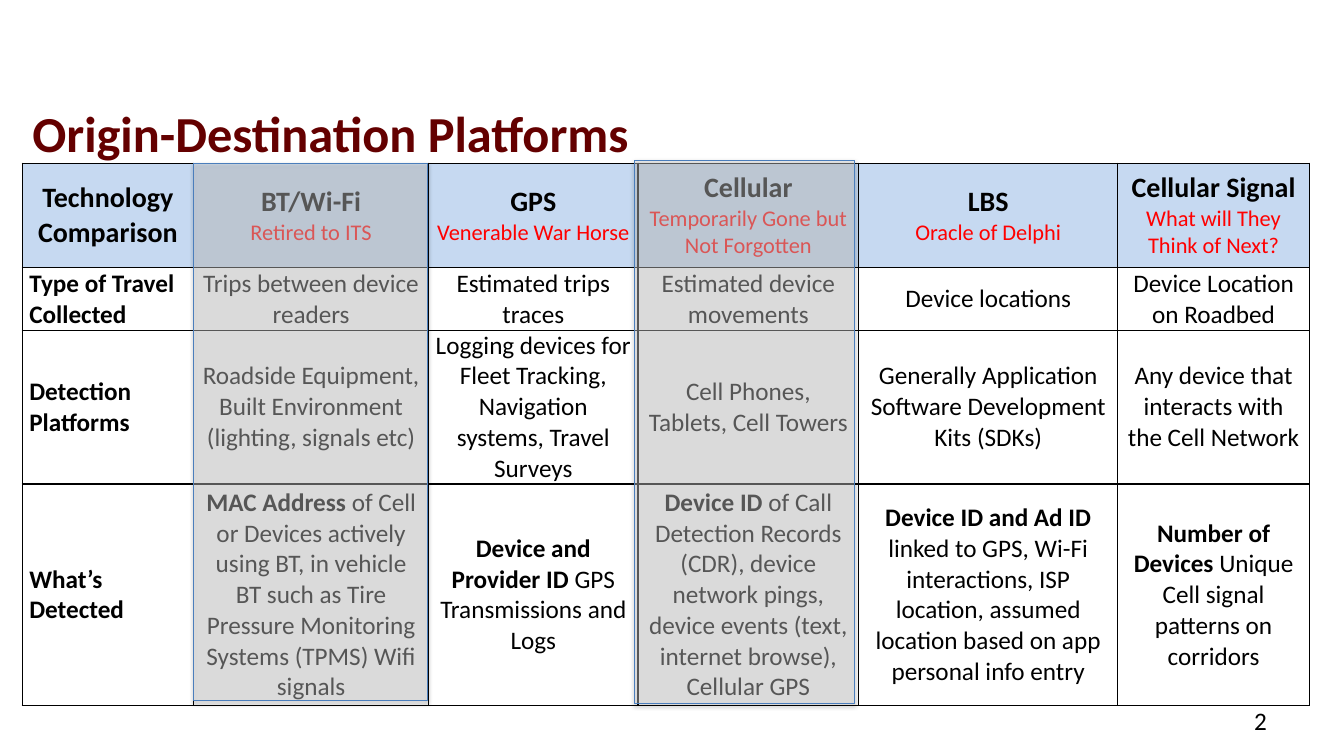
from dataclasses import dataclass

from lxml.etree import SubElement
from pptx import Presentation
from pptx.dml.color import RGBColor as RGB
from pptx.enum.shapes import MSO_SHAPE as Shape
from pptx.enum.text import MSO_ANCHOR as Anchor, MSO_AUTO_SIZE as AutoSize, PP_ALIGN as Align
from pptx.oxml import parse_xml
from pptx.oxml.ns import nsdecls, qn
from pptx.util import Cm, Pt


@dataclass(frozen=True)
class Theme:
    font: str = "Calibri"
    title: str = "640000"
    ink: str = "000000"
    tagline: str = "FF0000"
    header: str = "C6D9F1"
    body: str = "FFFFFF"
    veil: str = "D9D9D9"
    veil_line: str = "4B7EBC"
    title_size: int = 36
    head_size: int = 20
    tag_size: int = 16
    body_size: int = 18


@dataclass(frozen=True)
class Run:
    text: str
    size: int
    color: str
    bold: bool = False


@dataclass(frozen=True)
class Platform:
    name: str
    tagline: str
    width: float
    travel: str
    detection: str
    detected_key: str
    detected: str


@dataclass(frozen=True)
class Box:
    left: float
    top: float
    width: float
    height: float

    def lengths(self) -> list:
        return [Cm(v) for v in (self.left, self.top, self.width, self.height)]


T = Theme()
TITLE_BOX = Box(0.56, 2.44, 23.37, 1.8)
TABLE_BOX = Box(0.56, 4.11, 32.44, 13.46)
NUMBER_BOX = Box(24.28, 17.65, 7.9, 1.02)
VEILS = [Box(15.98, 4.04, 5.56, 13.69), Box(4.88, 4.11, 5.89, 13.54)]
LABEL_WIDTH = 4.32
ROW_HEIGHTS = [2.64, 1.57, 3.66, 5.59]
ROW_LABELS = ["Technology Comparison", "Type of Travel Collected",
              "Detection Platforms", "What’s Detected"]
PLATFORMS = [
    Platform("BT/Wi-Fi", "Retired to ITS", 5.92, "Trips between device readers",
             "Roadside Equipment, Built Environment (lighting, signals etc)",
             "MAC Address ",
             "of Cell or Devices actively using BT, in vehicle BT such as Tire "
             "Pressure Monitoring Systems (TPMS) Wifi signals"),
    Platform("GPS", "Venerable War Horse", 5.28, "Estimated trips traces",
             "Logging devices for Fleet Tracking, Navigation systems, Travel Surveys",
             "Device and Provider ID ", "GPS Transmissions and Logs"),
    Platform("Cellular", "Temporarily Gone but Not Forgotten", 5.56,
             "Estimated device movements", "Cell Phones, Tablets, Cell Towers",
             "Device ID ",
             "of Call Detection Records (CDR), device network pings, device events "
             "(text, internet browse), Cellular GPS"),
    Platform("LBS", "Oracle of Delphi", 6.53, "Device locations",
             "Generally Application Software Development Kits (SDKs)",
             "Device ID and Ad ID ",
             "linked to GPS, Wi-Fi interactions, ISP location, assumed location "
             "based on app personal info entry"),
    Platform("Cellular Signal", "What will They Think of Next?", 4.83,
             "Device Location on Roadbed",
             "Any device that interacts with the Cell Network",
             "Number of Devices ", "Unique Cell signal patterns on corridors"),
]


def write(tf, paragraphs: list[list[Run]], align: Align) -> None:
    tf.word_wrap = True
    for i, runs in enumerate(paragraphs):
        p = tf.add_paragraph() if i else tf.paragraphs[0]
        p.alignment = align
        for run in runs:
            r = p.add_run()
            r.text = run.text
            for name, value in {"name": T.font, "size": Pt(run.size), "bold": run.bold}.items():
                setattr(r.font, name, value)
            r.font.color.rgb = RGB.from_string(run.color)


def add_borders(cell) -> None:
    tc_pr = cell._tc.get_or_add_tcPr()
    for side in ("lnL", "lnR", "lnT", "lnB"):
        ln = SubElement(tc_pr, qn(f"a:{side}"), w=str(Pt(1)))
        fill = SubElement(ln, qn("a:solidFill"))
        SubElement(fill, qn("a:srgbClr"), val=T.ink)


def fill_cell(cell, paragraphs: list[list[Run]], color: str, align: Align) -> None:
    margins = {"margin_left": Cm(0.18), "margin_right": Cm(0.18),
               "margin_top": 0, "margin_bottom": 0}
    for name, value in {**margins, "vertical_anchor": Anchor.MIDDLE}.items():
        setattr(cell, name, value)
    add_borders(cell)
    cell.fill.solid()
    cell.fill.fore_color.rgb = RGB.from_string(color)
    write(cell.text_frame, paragraphs, align)


def platform_cells(item: Platform) -> list[list[list[Run]]]:
    """Paragraphs for each row of one platform's column."""
    return [
        [[Run(item.name, T.head_size, T.ink, True)],
         [Run(item.tagline, T.tag_size, T.tagline)]],
        [[Run(item.travel, T.body_size, T.ink)]],
        [[Run(item.detection, T.body_size, T.ink)]],
        [[Run(item.detected_key, T.body_size, T.ink, True),
          Run(item.detected, T.body_size, T.ink)]],
    ]


def add_comparison(s) -> None:
    labels = [[[Run(text, T.body_size if i else T.head_size, T.ink, True)]]
              for i, text in enumerate(ROW_LABELS)]
    columns = [labels] + [platform_cells(item) for item in PLATFORMS]
    widths = [LABEL_WIDTH] + [item.width for item in PLATFORMS]
    table = s.shapes.add_table(len(ROW_LABELS), len(columns), *TABLE_BOX.lengths()).table
    table.first_row = table.horz_banding = False
    for row, height in zip(table.rows, ROW_HEIGHTS):
        row.height = Cm(height)
    for c, (column, width) in enumerate(zip(columns, widths)):
        table.columns[c].width = Cm(width)
        for r, paragraphs in enumerate(column):
            align = Align.LEFT if r and not c else Align.CENTER
            fill_cell(table.cell(r, c), paragraphs, T.body if r else T.header, align)


def add_veil(s, box: Box) -> None:
    """Translucent panel that greys out a retired platform."""
    sp = s.shapes.add_shape(Shape.RECTANGLE, *box.lengths())
    sp.fill.solid()
    sp.fill.fore_color.rgb = RGB.from_string(T.veil)
    sp.line.color.rgb = RGB.from_string(T.veil_line)
    sp.line.width = Pt(0.75)
    sp_pr = sp._element.spPr
    color = sp_pr.find(qn("a:solidFill")).find(qn("a:srgbClr"))
    SubElement(color, qn("a:alpha"), val="40000")
    sp_pr.append(parse_xml(
        f'<a:effectLst {nsdecls("a")}><a:outerShdw blurRad="{Pt(3.1)}" dist="{Pt(1.8)}" '
        f'dir="5400000" rotWithShape="0"><a:srgbClr val="{T.ink}"><a:alpha val="35000"/>'
        '</a:srgbClr></a:outerShdw></a:effectLst>'))


def add_title(s) -> None:
    title = s.shapes.title
    names = ("left", "top", "width", "height")
    for name, value in zip(names, TITLE_BOX.lengths()):
        setattr(title, name, value)
    title.text_frame.auto_size = AutoSize.NONE
    write(title.text_frame,
          [[Run("Origin-Destination Platforms", T.title_size, T.title, True)]], Align.LEFT)


def main() -> None:
    prs = Presentation()
    prs.slide_width, prs.slide_height = Cm(33.87), Cm(19.05)
    s = prs.slides.add_slide(prs.slide_layouts[5])
    add_title(s)
    add_comparison(s)
    number = s.shapes.add_textbox(*NUMBER_BOX.lengths())
    write(number.text_frame, [[Run("2", T.body_size, T.ink)]], Align.RIGHT)
    for box in VEILS:
        add_veil(s, box)
    prs.save("out.pptx")


if __name__ == "__main__":
    main()
